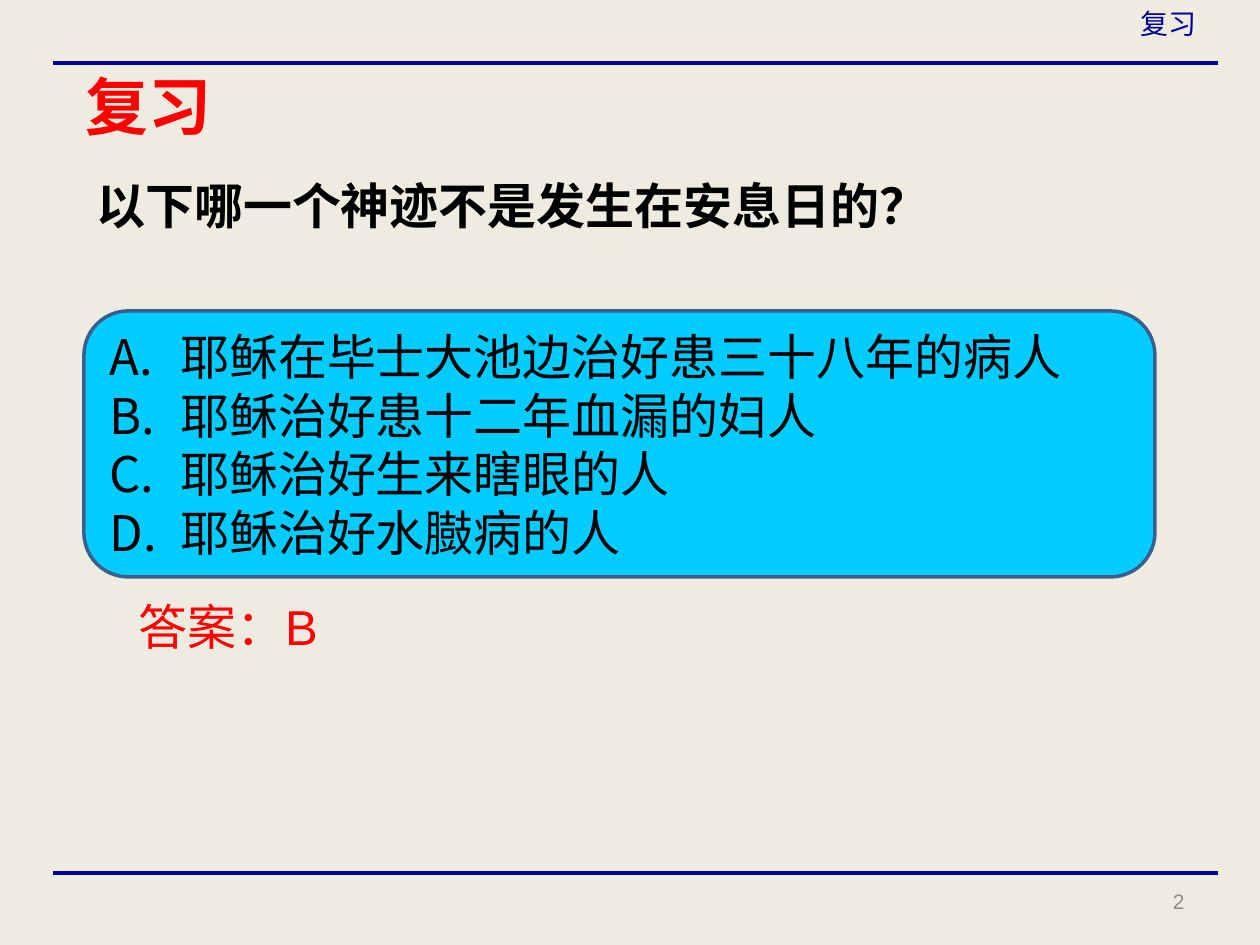
from lxml.etree import SubElement
from pptx import Presentation
from pptx.dml.color import RGBColor
from pptx.enum.shapes import MSO_CONNECTOR, MSO_SHAPE
from pptx.enum.text import MSO_ANCHOR, MSO_AUTO_SIZE, PP_ALIGN
from pptx.oxml.ns import qn
from pptx.util import Emu, Pt

PX_PER_INCH = 126
NAVY, RED, BLACK = "000099", "FF0000", "000000"
LEFT, WIDTH = 84, 1071  # column shared by the question and the options


def px(length):
    return Emu(round(length * 914400 / PX_PER_INCH))


def color(value):
    return RGBColor.from_string(value)


class SlideBuilder:
    """Holds the style and the current slide."""

    def __init__(self, deck, background):
        self.page = deck.slides.add_slide(deck.slide_layouts[5])
        self.page.background.fill.solid()
        self.page.background.fill.fore_color.rgb = color(background)

    def set_text(self, box, lines, size, font, ink, bold=False,
                 align=PP_ALIGN.LEFT, anchor=MSO_ANCHOR.TOP, wrap=True):
        frame = box.text_frame
        frame.text = "\n".join(lines)
        frame.word_wrap = wrap
        frame.auto_size = MSO_AUTO_SIZE.NONE
        frame.vertical_anchor = anchor
        for para in frame.paragraphs:
            para.alignment = align
            para.font.size = Pt(size)
            para.font.name = font
            para.font.bold = bold
            para.font.color.rgb = color(ink)

    def title(self, text, left, top, width, height):
        box = self.page.shapes.title
        box.left, box.top = px(left), px(top)
        box.width, box.height = px(width), px(height)
        self.set_text(box, [text], 36, "Calibri", RED, bold=True,
                      align=PP_ALIGN.CENTER, anchor=MSO_ANCHOR.MIDDLE)

    def text(self, text, left, top, width, height, size, font, ink, **style):
        box = self.page.shapes.add_textbox(
            px(left), px(top), px(width), px(height))
        self.set_text(box, [text], size, font, ink, **style)

    def rule(self, y):
        line = self.page.shapes.add_connector(
            MSO_CONNECTOR.STRAIGHT, px(53), px(y), px(1218), px(y))
        line.line.color.rgb = color(NAVY)
        line.line.width = Pt(2.25)
        SubElement(line._element.spPr, qn("a:effectLst"))

    def options(self, lines, left, top, width, height):
        """Draw a rounded panel with an A., B., C. list."""
        panel = self.page.shapes.add_shape(
            MSO_SHAPE.ROUNDED_RECTANGLE,
            px(left), px(top), px(width), px(height))
        panel.shadow.inherit = False
        panel.fill.solid()
        panel.fill.fore_color.rgb = color("00CCFF")
        panel.line.color.rgb = color("3A5F8C")
        panel.line.width = Pt(2)
        self.set_text(panel, lines, 28, "Calibri", BLACK,
                      anchor=MSO_ANCHOR.MIDDLE)
        indent = px(71)
        for para in panel.text_frame.paragraphs:
            properties = para._p.get_or_add_pPr()
            properties.set("marL", str(indent))
            properties.set("indent", str(-indent))
            numbering = properties.makeelement(
                qn("a:buAutoNum"), {"type": "alphaUcPeriod"})
            properties.insert_element_before(
                numbering, "a:tabLst", "a:defRPr", "a:extLst")


def main():
    deck = Presentation()
    deck.slide_width, deck.slide_height = px(1260), px(945)
    slide = SlideBuilder(deck, "EEECE1")

    slide.title("复习", 54, 63, 189, 84)
    slide.text("2", 903, 876, 294, 50, 12, "Arial", "8C8C8C",
               align=PP_ALIGN.RIGHT, anchor=MSO_ANCHOR.MIDDLE)
    for y in (873, 63):
        slide.rule(y)
    slide.text("复习", 1128, 0, 82, 47, 16, "Calibri", NAVY, wrap=False)
    slide.options([
        "耶稣在毕士大池边治好患三十八年的病人",
        "耶稣治好患十二年血漏的妇人",
        "耶稣治好生来瞎眼的人",
        "耶稣治好水臌病的人",
    ], LEFT, 311, WIDTH, 266)
    slide.text("以下哪一个神迹不是发生在安息日的？", LEFT, 168, WIDTH, 73,
               28, "Arial", BLACK, bold=True, anchor=MSO_ANCHOR.BOTTOM)
    slide.text("答案：B", 126, 590, 207, 72, 28, "Arial", RED)

    deck.save("out.pptx")


if __name__ == "__main__":
    main()
